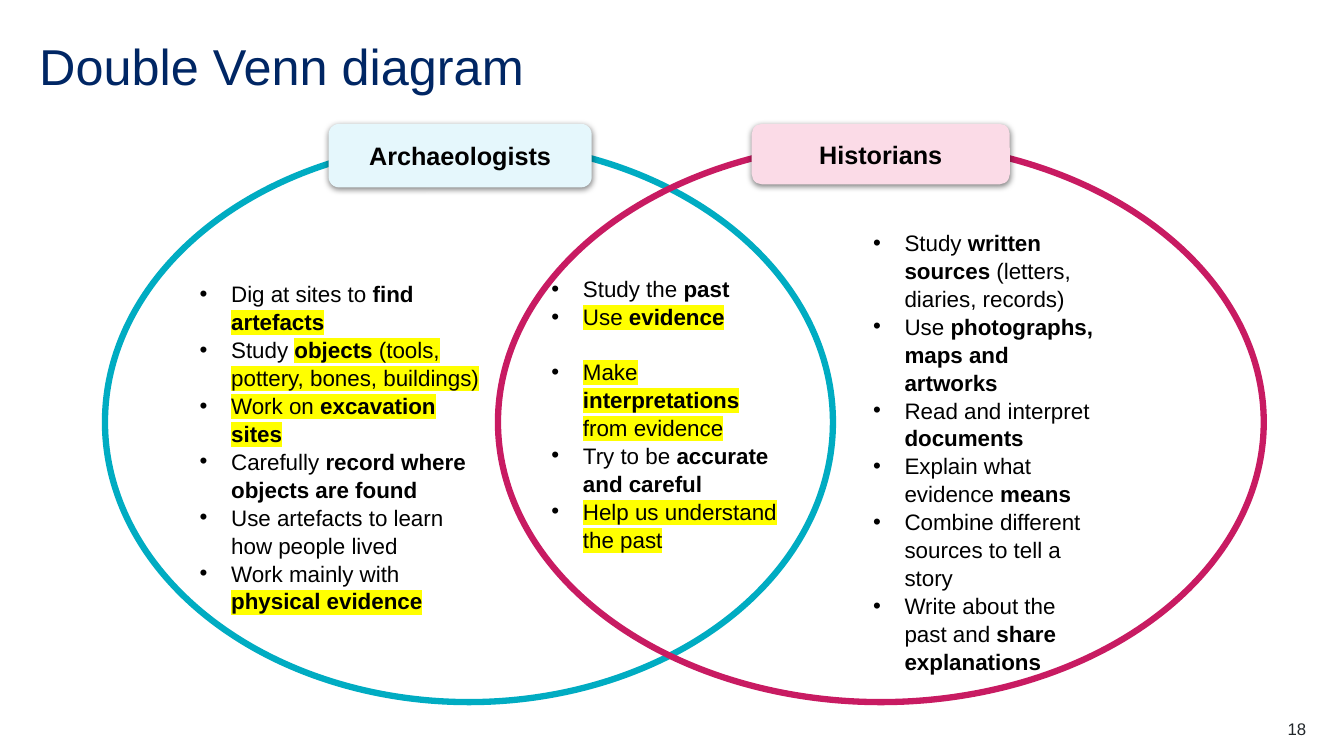
from lxml import etree
from pptx import Presentation
from pptx.dml.color import RGBColor
from pptx.enum import shapes, text
from pptx.oxml import ns
from pptx.util import Pt


def add_xml(parent, tag, **attributes):
    """Append a DrawingML element and return it."""
    return etree.SubElement(parent, ns.qn(tag), attributes)


def set_font(font, size, colour):
    font.name = "Arial"
    font.size = Pt(size)
    font.color.rgb = RGBColor.from_string(colour)


deck = Presentation()
deck.slide_width, deck.slide_height = Pt(960), Pt(540)
page = deck.slides.add_slide(deck.slide_layouts.get_by_name("Comparison"))

# Title
title = page.shapes.title
title.left, title.top, title.width, title.height = Pt(28), Pt(28), Pt(904), Pt(43)
frame = title.text_frame
frame.margin_left = frame.margin_top = frame.margin_right = frame.margin_bottom = 0
frame.vertical_anchor = text.MSO_ANCHOR.MIDDLE
frame.auto_size = text.MSO_AUTO_SIZE.NONE
frame.text = "Double Venn diagram"
para = frame.paragraphs[0]
para.alignment = text.PP_ALIGN.LEFT
para.line_spacing = 0.9
set_font(para.font, 36, "002664")

# Circles with their labels: name, line, fill, circle (left, width), label (left, width, height)
circles = [
    ("Archaeologists", "00ACC2", "E5F7FC", (75, 520), (234.7, 188, 45.4)),
    ("Historians", "C81B62", "FBDBE7", (355.7, 547), (537, 184.3, 43.2)),
]
for name, line, fill, (left, width), (label_left, label_width, label_height) in circles:
    circle = page.shapes.add_shape(
        shapes.MSO_SHAPE.OVAL, Pt(left), Pt(101.5), Pt(width), Pt(400))
    circle.shadow.inherit = False
    circle.fill.background()
    circle.line.color.rgb = RGBColor.from_string(line)
    circle.line.width = Pt(4.5)

    label = page.shapes.add_shape(
        shapes.MSO_SHAPE.ROUNDED_RECTANGLE,
        Pt(label_left), Pt(88.5), Pt(label_width), Pt(label_height))
    label.fill.solid()
    label.fill.fore_color.rgb = RGBColor.from_string(fill)
    label.line.fill.background()
    label.shadow.inherit = False
    effects = label._element.spPr.find(ns.qn("a:effectLst"))
    shadow = add_xml(effects, "a:outerShdw", blurRad=str(Pt(4.5)), dist=str(Pt(1.5)),
                     dir="5400000", algn="t", rotWithShape="0")
    add_xml(add_xml(shadow, "a:srgbClr", val="000000"), "a:alpha", val="50000")
    label.text_frame.text = name
    label.text_frame.vertical_anchor = text.MSO_ANCHOR.MIDDLE
    para = label.text_frame.paragraphs[0]
    para.alignment = text.PP_ALIGN.CENTER
    para.font.bold = True
    set_font(para.font, 18, "000000")

# Lists: each point is a row of (words, style); b is bold, h is highlighted
archaeologists = [
    [("Dig at sites to ", ""), ("find ", "b"), ("artefacts", "bh")],
    [("Study ", ""), ("objects", "bh"), (" (tools, pottery, bones, buildings)", "h")],
    [("Work on ", "h"), ("excavation sites", "bh")],
    [("Carefully ", ""), ("record where objects are found", "b")],
    [("Use artefacts to learn how people lived", "")],
    [("Work mainly with ", ""), ("physical evidence", "bh")],
]
both = [
    [("Study the ", ""), ("past", "b")],
    [("Use ", "h"), ("evidence", "bh")],
    [("Make ", "h"), ("interpretations ", "bh"), ("from evidence", "h")],
    [("Try to be ", ""), ("accurate and careful", "b")],
    [("Help us understand the past", "h")],
]
historians = [
    [("Study ", ""), ("written sources", "b"), (" (letters, diaries, records)", "")],
    [("Use ", ""), ("photographs, maps and artworks", "b")],
    [("Read and interpret ", ""), ("documents", "b")],
    [("Explain what evidence ", ""), ("means", "b")],
    [("Combine different sources to tell a story", "")],
    [("Write about the past and ", ""), ("share explanations", "b")],
]
# Placeholder index, points, (left, top, width, height), index of the point after a gap
lists = [
    (2, archaeologists, (133.2, 190, 224, 250), None),
    (3, both, (384.5, 186.5, 188.6, 235.4), 2),
    (4, historians, (614.2, 153.4, 180, 326), None),
]
for index, points, (left, top, width, height), gap_before in lists:
    box = page.placeholders[index]
    box.left, box.top, box.width, box.height = Pt(left), Pt(top), Pt(width), Pt(height)
    frame = box.text_frame
    frame.margin_left = frame.margin_top = frame.margin_right = frame.margin_bottom = Pt(9.4)
    frame.vertical_anchor = text.MSO_ANCHOR.TOP
    frame.auto_size = text.MSO_AUTO_SIZE.NONE
    frame.word_wrap = True
    for number, point in enumerate(points):
        para = frame.add_paragraph() if number else frame.paragraphs[0]
        para.line_spacing = 1.04
        para.space_before = Pt(19.2 if number == gap_before else 0)
        para.space_after = Pt(0)
        properties = para._p.get_or_add_pPr()
        properties.set("marL", str(Pt(22.5)))
        properties.set("indent", str(Pt(-22.5)))
        add_xml(properties, "a:buFont", typeface="Arial")
        add_xml(properties, "a:buChar", char="•")
        set_font(para.font, 16, "000000")
        for words, style in point:
            span = para.add_run()
            span.text = words
            span.font.bold = "b" in style
            if "h" in style:
                highlight = add_xml(span.font._element, "a:highlight")
                add_xml(highlight, "a:srgbClr", val="FFFF00")

# The fourth placeholder of the layout is not needed
unused = page.placeholders[1]._element
unused.getparent().remove(unused)

# Page number
number_box = page.shapes.add_textbox(Pt(876), Pt(513.4), Pt(57), Pt(14.4))
frame = number_box.text_frame
frame.margin_left = frame.margin_top = frame.margin_right = frame.margin_bottom = 0
frame.word_wrap = True
frame.text = "18"
para = frame.paragraphs[0]
para.alignment = text.PP_ALIGN.RIGHT
set_font(para.font, 12, "22272B")

deck.save("out.pptx")
